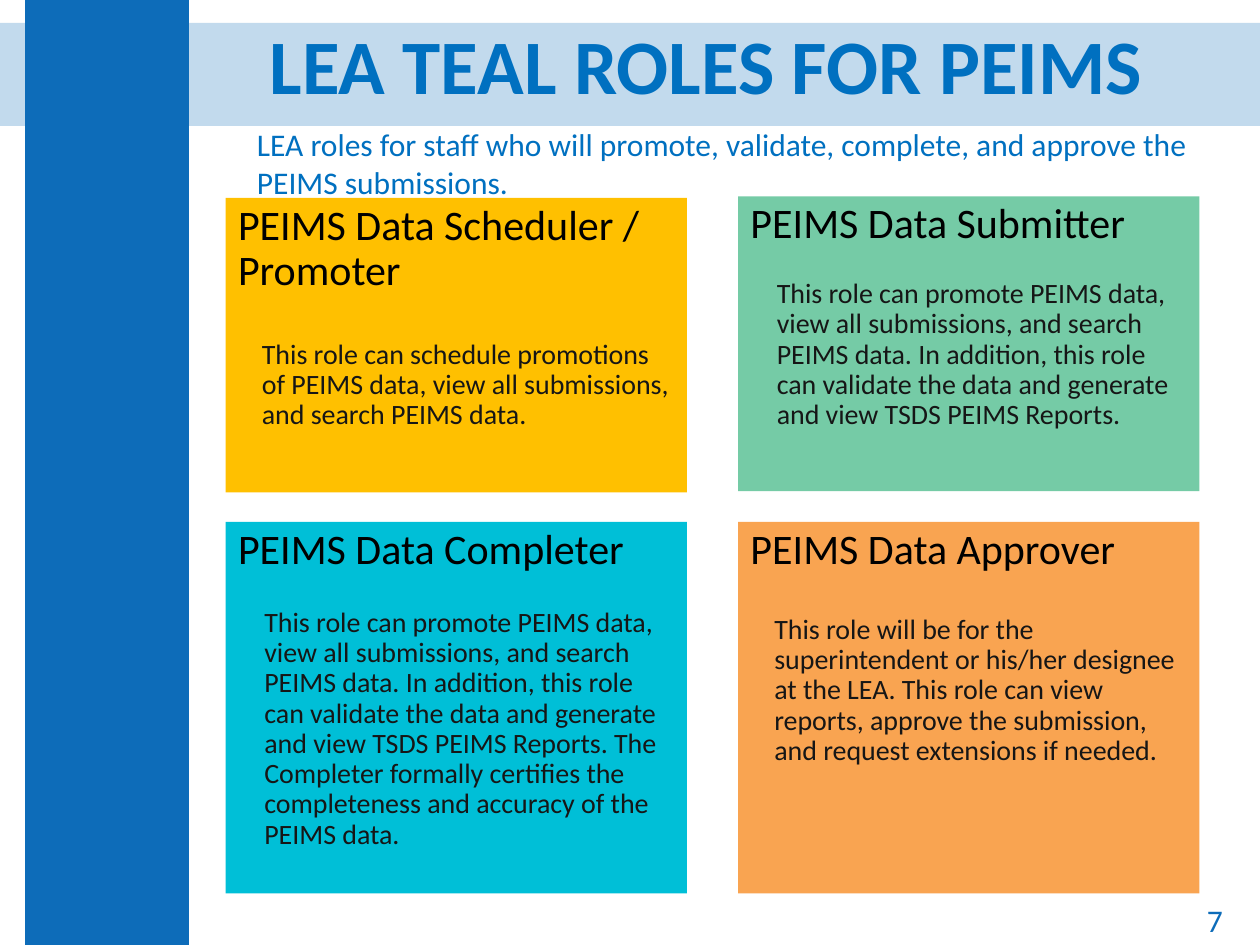
from dataclasses import dataclass
from typing import Any

from lxml import etree
from pptx import Presentation
from pptx import util as u
from pptx.dml.color import RGBColor
from pptx.enum import shapes, text
from pptx.oxml.ns import qn

BLUE = "0D6CB9"
TITLE_BLUE = "0070C0"


def colour(hex_code):
    return RGBColor.from_string(hex_code)


@dataclass
class Sheet:
    """Holds the text style and the page being drawn."""
    page: Any
    font: str = "Calibri"
    heading_size: int = 24
    body_size: int = 16
    heading_colour: str = "000000"
    body_colour: str = "161616"
    line_spacing: float = 0.9

    def rectangle(self, left, top, width, height, fill, opacity=100):
        box = self.page.shapes.add_shape(
            shapes.MSO_SHAPE.RECTANGLE, *map(u.Cm, (left, top, width, height)))
        box.shadow.inherit = False
        box.line.fill.background()
        box.fill.solid()
        box.fill.fore_color.rgb = colour(fill)
        if opacity < 100:
            tint = next(box._element.spPr.iter(qn("a:srgbClr")))
            etree.SubElement(tint, qn("a:alpha"), val=str(opacity * 1000))
        return box

    def set_words(self, para, words, size, ink, bold=False):
        para.text = words
        for span in para.runs:
            span.font.name = self.font
            span.font.size = u.Pt(size)
            span.font.bold = bold
            span.font.color.rgb = colour(ink)

    def label(self, left, top, width, height, words, size, ink, bold=False,
              align=text.PP_ALIGN.LEFT, anchor=text.MSO_ANCHOR.MIDDLE):
        box = self.page.shapes.add_textbox(
            *map(u.Cm, (left, top, width, height)))
        frame = box.text_frame
        frame.word_wrap = True
        frame.vertical_anchor = anchor
        para = frame.paragraphs[0]
        self.set_words(para, words, size, ink, bold)
        para.alignment = align
        return para

    def card(self, left, top, width, height, fill, role, duty, indent, gap):
        """Draw a filled role card; gap is the space in points above the duty."""
        frame = self.rectangle(left, top, width, height, fill).text_frame
        frame.word_wrap = True
        frame.vertical_anchor = text.MSO_ANCHOR.TOP
        heading, body = frame.paragraphs[0], frame.add_paragraph()
        self.set_words(heading, role, self.heading_size, self.heading_colour)
        self.set_words(body, duty, self.body_size, self.body_colour)
        for para in (heading, body):
            para.alignment = text.PP_ALIGN.LEFT
            para.line_spacing = self.line_spacing
        body.space_before = u.Pt(gap)
        body._p.get_or_add_pPr().set("marL", str(u.Cm(indent)))


def main():
    deck = Presentation()
    deck.slide_width, deck.slide_height = u.Cm(25.4), u.Cm(19.05)
    sheet = Sheet(deck.slides.add_slide(deck.slide_layouts[6]))

    sheet.rectangle(0, 0.46, 25.4, 2.08, BLUE, opacity=25)
    sheet.rectangle(0.51, 0, 3.3, 19.05, BLUE)
    title = sheet.label(3.99, 0.81, 20.5, 1.19, "LEA TEAL ROLES FOR PEIMS",
                        44, TITLE_BLUE, True, text.PP_ALIGN.CENTER)
    title.line_spacing = sheet.line_spacing

    left, right = 4.55, 14.88
    lower = 10.52
    width, upper_height, lower_height = 9.3, 5.94, 7.49
    promote = ("This role can promote PEIMS data, view all submissions, and "
               "search PEIMS data. In addition, this role can validate the "
               "data and generate and view TSDS PEIMS Reports.")
    cards = [
        (left, 3.99, upper_height, "FFC000", "PEIMS Data Scheduler / Promoter",
         "This role can schedule promotions of PEIMS data, view all "
         "submissions, and search PEIMS data.", 0.48, 26),
        (left, lower, lower_height, "00BFD7", "PEIMS Data Completer",
         promote + " The Completer formally certifies the completeness and "
         "accuracy of the PEIMS data.", 0.53, 20),
        (right, 3.96, upper_height, "75CBA6", "PEIMS Data Submitter",
         promote, 0.53, 18),
        (right, lower, lower_height, "F9A451", "PEIMS Data Approver",
         "This role will be for the superintendent or his/her designee at the "
         "LEA. This role can view reports, approve the submission, and "
         "request extensions if needed.", 0.48, 24),
    ]
    for x, y, height, fill, role, duty, indent, gap in cards:
        sheet.card(x, y, width, height, fill, role, duty, indent, gap)

    sheet.label(19.18, 18.03, 5.72, 1.02, "7", 18, BLUE,
                align=text.PP_ALIGN.RIGHT)
    sheet.label(4.93, 2.39, 19.56, 2.57,
                "LEA roles for staff who will promote, validate, complete, "
                "and approve the PEIMS submissions.", 18, TITLE_BLUE,
                anchor=text.MSO_ANCHOR.TOP)
    deck.save("out.pptx")


if __name__ == "__main__":
    main()
